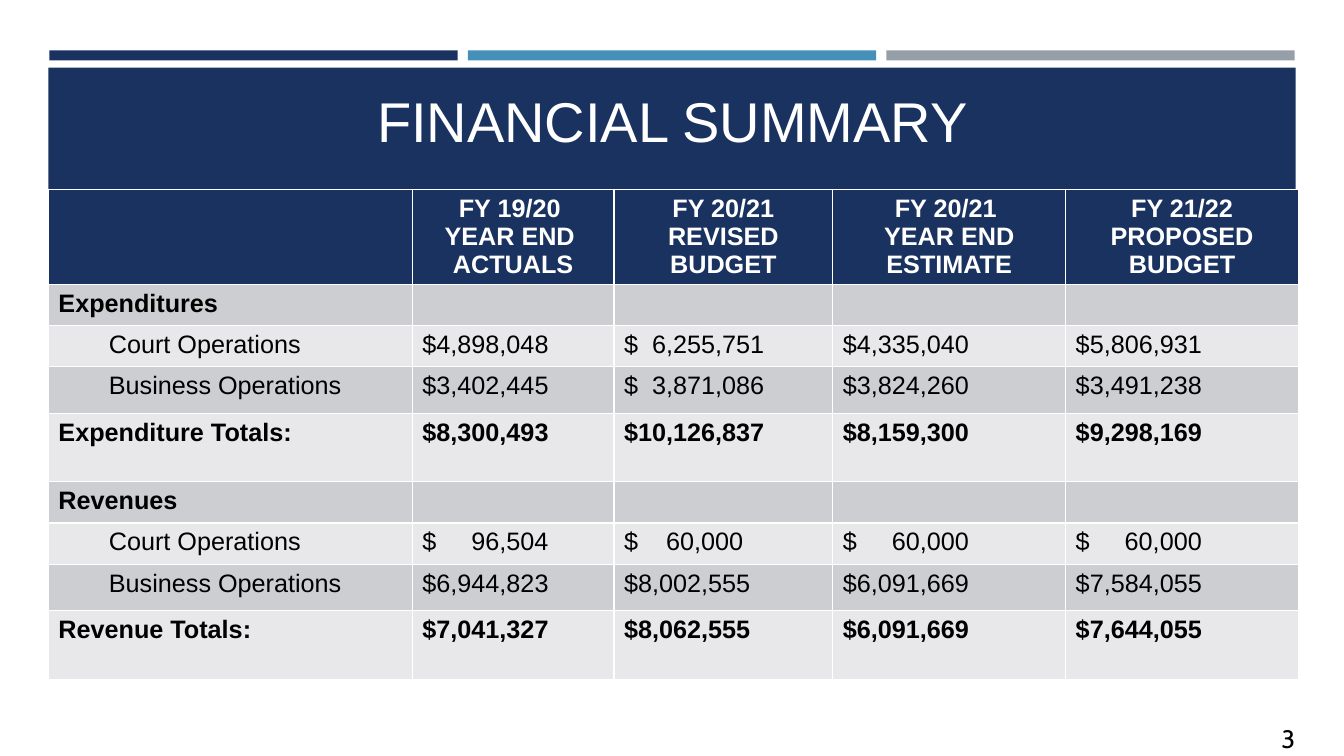
import pptx
import pptx.dml.color
import pptx.enum.shapes
import pptx.enum.text
import pptx.util

PX = 9144
THEME = {
    "navy": "1A3260", "blue": "4590B8", "gray": "969FA7",
    "white": "FFFFFF", "black": "000000",
    "bands": ("CDCED2", "E8E8EA"),
    "font": "Arial", "number_font": "Cabin",
    "title_size": 40, "body_size": 18,
}
ALIGN = pptx.enum.text.PP_ALIGN


def paint(fill, color):
    fill.solid()
    fill.fore_color.rgb = pptx.dml.color.RGBColor.from_string(color)


def write(frame, text, size=THEME["body_size"], font=THEME["font"],
          color=THEME["black"], bold=False, align=ALIGN.LEFT, indent=0):
    for number, line in enumerate(text.split("\n")):
        paragraph = frame.add_paragraph() if number else frame.paragraphs[0]
        paragraph.alignment = align
        paragraph.font.size = pptx.util.Pt(size)
        if indent:
            paragraph.level = 1
            properties = paragraph._p.get_or_add_pPr()
            properties.set("marL", str(indent * PX))
            properties.set("indent", "0")
        run = paragraph.add_run()
        run.text = line
        run.font.size = pptx.util.Pt(size)
        run.font.name = font
        run.font.bold = bold
        run.font.color.rgb = pptx.dml.color.RGBColor.from_string(color)


presentation = pptx.Presentation()
presentation.slide_width = 1333 * PX
presentation.slide_height = 750 * PX
slide = presentation.slides.add_slide(presentation.slide_layouts[5])

bars = [(49 + 415 * i, 50, 405, 10, THEME[name])
        for i, name in enumerate(("navy", "blue", "gray"))]
title_band = (48, 67, 1237, 130, THEME["navy"])
for left, top, width, height, color in bars + [title_band]:
    bar = slide.shapes.add_shape(
        pptx.enum.shapes.MSO_SHAPE.RECTANGLE,
        left * PX, top * PX, width * PX, height * PX)
    bar.shadow.inherit = False
    paint(bar.fill, color)
    bar.line.fill.background()

title = slide.shapes.title
title.left, title.top, title.width, title.height = (
    64 * PX, 77 * PX, 1206 * PX, 81 * PX)
title.text_frame.auto_size = pptx.enum.text.MSO_AUTO_SIZE.NONE
title.text_frame.vertical_anchor = pptx.enum.text.MSO_ANCHOR.BOTTOM
write(title.text_frame, "FINANCIAL SUMMARY", size=THEME["title_size"],
      color=THEME["white"], align=ALIGN.CENTER)
slide.shapes._spTree.append(title._element)

COURT, BUSINESS = "Court Operations", "Business Operations"
summary = [
    ("", "FY 19/20  YEAR END \nACTUALS", "FY 20/21\nREVISED BUDGET",
     "FY 20/21 \nYEAR END ESTIMATE", "FY 21/22\nPROPOSED BUDGET"),
    ("Expenditures", "", "", "", ""),
    (COURT, "$4,898,048", "$  6,255,751", "$4,335,040", "$5,806,931"),
    (BUSINESS, "$3,402,445", "$  3,871,086", "$3,824,260", "$3,491,238"),
    ("Expenditure Totals:", "$8,300,493", "$10,126,837", "$8,159,300", "$9,298,169"),
    ("Revenues", "", "", "", ""),
    (COURT, "$     96,504", "$    60,000", "$     60,000", "$     60,000"),
    (BUSINESS, "$6,944,823", "$8,002,555", "$6,091,669", "$7,584,055"),
    ("Revenue Totals:", "$7,041,327", "$8,062,555", "$6,091,669", "$7,644,055"),
]
column_widths = (361, 200, 217, 231, 231)
row_heights = (93,) + (41, 41, 46, 68) * 2
budget = slide.shapes.add_table(
    len(summary), len(column_widths), 48 * PX, 188 * PX,
    sum(column_widths) * PX, sum(row_heights) * PX).table
budget.horz_banding = False
for column, width in zip(budget.columns, column_widths):
    column.width = width * PX
for r, (entries, height) in enumerate(zip(summary, row_heights)):
    budget.rows[r].height = height * PX
    is_header = r == 0
    is_operation = entries[0] in (COURT, BUSINESS)
    for c, entry in enumerate(entries):
        cell = budget.cell(r, c)
        paint(cell.fill, THEME["navy"] if is_header else THEME["bands"][(r - 1) % 2])
        if entry:
            write(cell.text_frame, entry, bold=not is_operation,
                  color=THEME["white"] if is_header else THEME["black"],
                  align=ALIGN.CENTER if is_header else ALIGN.LEFT,
                  indent=50 if is_operation and c == 0 else 0)

page_number = slide.shapes.add_textbox(1261 * PX, 713 * PX, 60 * PX, 40 * PX)
page_number.text_frame.word_wrap = True
write(page_number.text_frame, "3", font=THEME["number_font"])

presentation.save("out.pptx")
